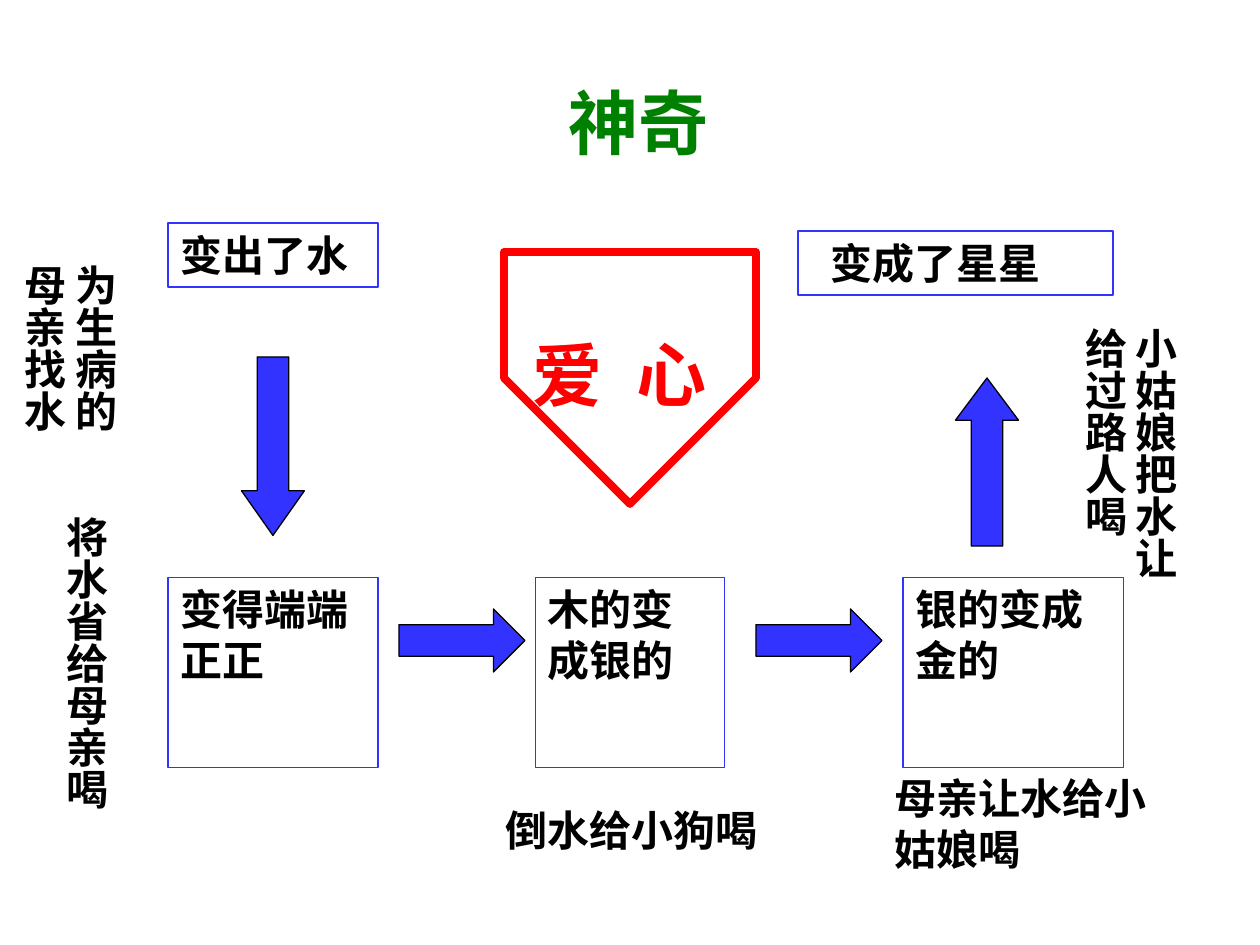
from pptx import Presentation, oxml
from pptx import util as u
from pptx.dml.color import RGBColor
from pptx.enum import shapes, text
from pptx.oxml import ns

COLORS = {"blue": "3333FF", "black": "000000", "red": "FF0000", "green": "008000"}
SLIDE_SIZE = (10, 7.5)
CELLS_PER_INCH = 12
FRAME_FORMAT = {
    "word_wrap": True,
    "auto_size": text.MSO_AUTO_SIZE.NONE,
    "vertical_anchor": text.MSO_ANCHOR.TOP,
}
LABEL_FORMAT = {"name": "Roboto", "size": u.Pt(24), "bold": True}
HEADING_FORMAT = {**LABEL_FORMAT, "size": u.Pt(40)}
TITLE_FORMAT = {**HEADING_FORMAT, "name": "Noto Sans CJK SC"}

BOXES = [
    ("变出了水", (16, 21.25, 20, 6.1), 0.1),
    ("变得端端正正", (16, 55, 20, 18.1), 0.1),
    ("木的变成银的", (51, 55, 18, 18.1), 0.1),
    ("银的变成金的", (86, 55, 21, 18.1), 0.1),
    ("变成了星星", (76, 22, 30, 6.1), 0.26),
]
ARROWS = [
    ("DOWN_ARROW", (23, 34, 6, 17), 0.71),
    ("RIGHT_ARROW", (38, 58, 12, 6), 0.5),
    ("RIGHT_ARROW", (72, 58, 12, 6), 0.5),
    ("UP_ARROW", (91, 36, 6, 16), 0.67),
]
CAPTIONS = [
    ("为生病的母亲找水", (-7, 24, 19, 19), True),
    ("将水省给母亲喝", (4, 48, 7.2, 32), True),
    ("倒水给小狗喝", (47, 76, 31, 6), False),
    ("母亲让水给小姑娘喝", (84, 73, 29, 10.8), False),
    ("小姑娘把水让给过路人喝", (101, 30, 12, 27), True),
]
HEART_CENTER, HEART_TIP = 4.92, 4.25
HEART_LOBE = [
    (4.92, 2.38), (4.87, 2.34), (4.76, 2.26), (4.7, 2.24),
    (4.55, 2.18), (4.41, 2.17), (4.25, 2.17),
    (4.1, 2.18), (3.95, 2.22), (3.83, 2.29),
    (3.73, 2.38), (3.65, 2.48), (3.61, 2.57),
    (3.58, 2.69), (3.61, 2.8), (3.65, 2.9),
]


def color(name):
    return RGBColor.from_string(COLORS[name])


def grid(cells):
    return [u.Inches(cell / CELLS_PER_INCH) for cell in cells]


def apply_format(target, values):
    for name, value in values.items():
        setattr(target, name, value)


def write_text(shape, wording, font_format, color_name="black", align="LEFT", inset=0.1):
    frame = shape.text_frame
    apply_format(frame, {**FRAME_FORMAT, "margin_left": u.Inches(inset)})
    paragraph = frame.paragraphs[0]
    paragraph.alignment = getattr(text.PP_ALIGN, align)
    run = paragraph.add_run()
    run.text = wording
    apply_format(run.font, font_format)
    run.font.color.rgb = color(color_name)
    east_asian = oxml.parse_xml(f'<a:ea {ns.nsdecls("a")} typeface="{font_format["name"]}"/>')
    run.font.fill
    run._r.get_or_add_rPr().append(east_asian)
    return run


def style_shape(shape, line_color, width=0.75, fill_color=None):
    shape.shadow.inherit = False
    if fill_color:
        shape.fill.solid()
        shape.fill.fore_color.rgb = color(fill_color)
    else:
        shape.fill.background()
    shape.line.color.rgb = color(line_color)
    shape.line.width = u.Pt(width)


def add_box(slide, wording, cells, inset):
    box = slide.shapes.add_shape(shapes.MSO_SHAPE.RECTANGLE, *grid(cells))
    style_shape(box, "blue")
    write_text(box, wording, LABEL_FORMAT, inset=inset)


def add_arrow(slide, kind, cells, head_length):
    arrow = slide.shapes.add_shape(getattr(shapes.MSO_SHAPE, kind), *grid(cells))
    arrow.adjustments[1] = head_length
    style_shape(arrow, "black", fill_color="blue")


def add_text(slide, wording, cells, font_format, vertical=False, **options):
    box = slide.shapes.add_textbox(*grid(cells))
    run = write_text(box, wording, font_format, **options)
    if vertical:
        box.text_frame._txBody.bodyPr.set("vert", "eaVert")
    return run


def curve_points(controls, steps=8):
    points = [controls[0]]
    for start in range(0, len(controls) - 1, 3):
        segment = controls[start:start + 4]
        for step in range(1, steps + 1):
            t = step / steps
            weights = ((1 - t) ** 3, 3 * t * (1 - t) ** 2, 3 * t * t * (1 - t), t ** 3)
            points.append(tuple(
                sum(weight * point[axis] for weight, point in zip(weights, segment))
                for axis in (0, 1)
            ))
    return points


def add_heart(slide):
    left = curve_points(HEART_LOBE)
    right = [(2 * HEART_CENTER - x, y) for x, y in reversed(left)]
    outline = left + [(HEART_CENTER, HEART_TIP)] + right[:-1]
    builder = slide.shapes.build_freeform(*outline[0], scale=u.Inches(1))
    builder.add_line_segments(outline[1:], close=True)
    style_shape(builder.convert_to_shape(), "red", width=4.5)


def main():
    presentation = Presentation()
    presentation.slide_width, presentation.slide_height = map(u.Inches, SLIDE_SIZE)
    slide = presentation.slides.add_slide(presentation.slide_layouts[6])
    for box in BOXES:
        add_box(slide, *box)
    for arrow in ARROWS:
        add_arrow(slide, *arrow)
    for wording, cells, vertical in CAPTIONS:
        add_text(slide, wording, cells, LABEL_FORMAT, vertical)
    add_heart(slide)
    heading = add_text(slide, "爱 心", (48, 31, 22, 9.2), HEADING_FORMAT,
                       color_name="red", align="CENTER")
    heading._r.get_or_add_rPr().set("spc", "500")
    add_text(slide, "神奇", (53, 7, 19, 9.2), TITLE_FORMAT, color_name="green")
    presentation.save("out.pptx")


if __name__ == "__main__":
    main()
